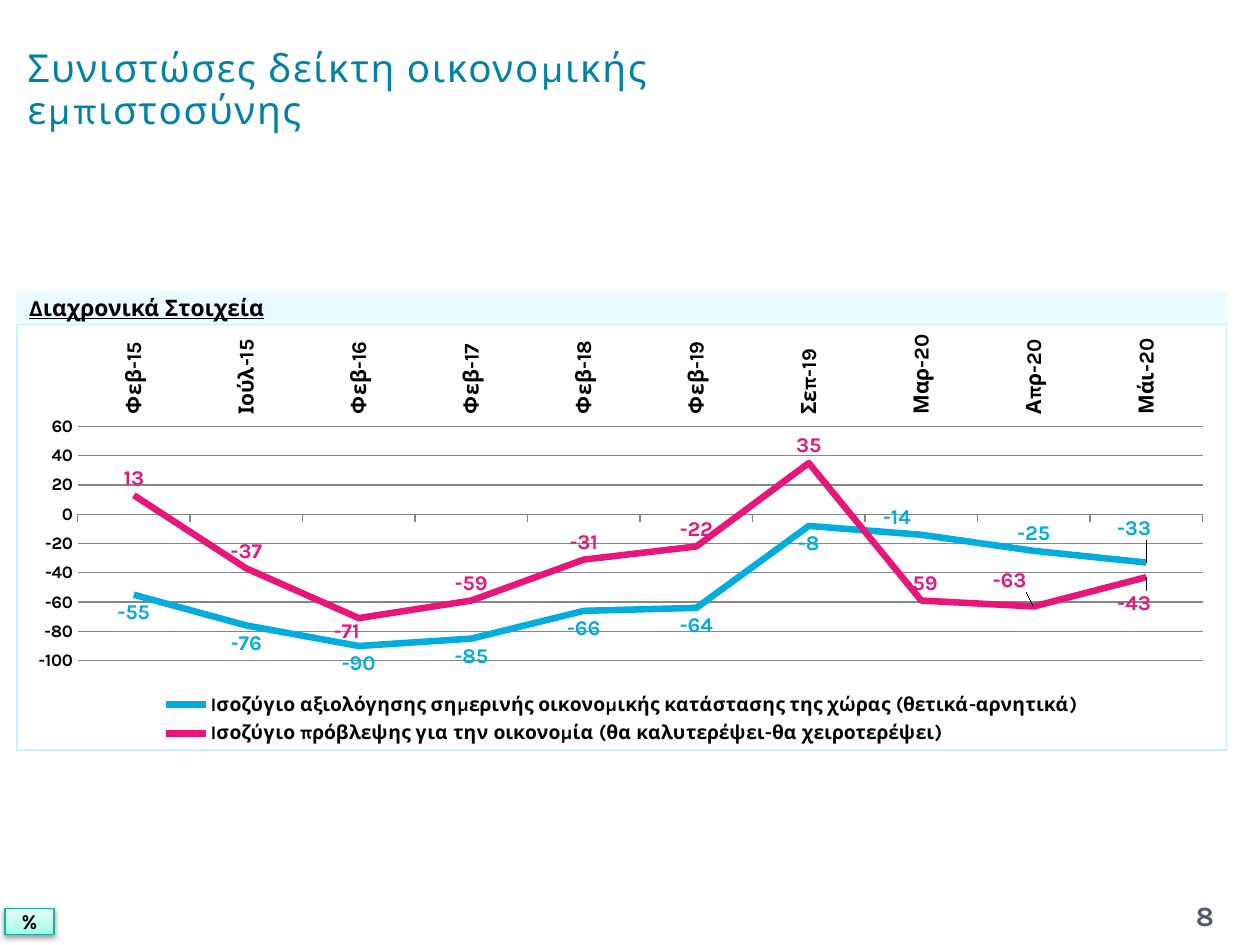
from pptx import Presentation
from pptx.chart.data import CategoryChartData
from pptx.dml.color import RGBColor
from pptx.enum.chart import (XL_CHART_TYPE, XL_LABEL_POSITION,
                             XL_LEGEND_POSITION, XL_TICK_LABEL_POSITION,
                             XL_TICK_MARK)
from pptx.enum.shapes import MSO_SHAPE
from pptx.enum.text import MSO_ANCHOR, PP_ALIGN
from pptx.oxml import parse_xml
from pptx.oxml.ns import nsdecls
from pptx.util import Pt

LINE = XL_CHART_TYPE.LINE
ABOVE, BELOW = XL_LABEL_POSITION.ABOVE, XL_LABEL_POSITION.BELOW
BOTTOM = XL_LEGEND_POSITION.BOTTOM
HIGH = XL_TICK_LABEL_POSITION.HIGH
OUT, NONE = XL_TICK_MARK.OUTSIDE, XL_TICK_MARK.NONE
RECT = MSO_SHAPE.RECTANGLE
MIDDLE = MSO_ANCHOR.MIDDLE
LEFT, CENTER = PP_ALIGN.LEFT, PP_ALIGN.CENTER

COLORS = {
    "title": "0082A5", "number": "4E5B6F", "text": "000000",
    "band": "C5F3FF", "grid": "868686", "badge": "16B39E",
    "now": "00ADDC", "next": "EA157A",
}
BADGE_STOPS = [(0, "9DFDE8"), (35, "BBFCED"), (100, "E4FFF9")]

DATES = ["Φεβ-15", "Ιούλ-15", "Φεβ-16", "Φεβ-17", "Φεβ-18",
         "Φεβ-19", "Σεπ-19", "Μαρ-20", "Απρ-20", "Μάι-20"]
# name, values, colour, label side, {point: (side, x shift, y shift)}
SERIES = [
    ("Iσοζύγιο αξιολόγησης σημερινής οικονομικής κατάστασης της χώρας "
     "(θετικά-αρνητικά)",
     [-55, -76, -90, -85, -66, -64, -8, -14, -25, -33], "now", BELOW,
     {7: (ABOVE, -0.02, 0), 8: (ABOVE, 0, 0), 9: (ABOVE, -0.01, -0.04)}),
    ("Iσοζύγιο πρόβλεψης για την οικονομία "
     "(θα καλυτερέψει-θα χειροτερέψει)",
     [13, -37, -71, -59, -31, -22, 35, -59, -63, -43], "next", ABOVE,
     {2: (BELOW, -0.01, -0.01), 8: (ABOVE, -0.02, -0.02),
      9: (BELOW, -0.01, 0.02)}),
]


def rgb(key):
    return RGBColor.from_string(COLORS[key])


def layout(x, y, w=None, h=None, inner=False):
    """Manual chart layout; without a size, x and y are shifts."""
    parts = '<c:layoutTarget val="inner"/>' if inner else ""
    if w:
        parts += '<c:xMode val="edge"/><c:yMode val="edge"/>'
    parts += f'<c:x val="{x}"/><c:y val="{y}"/>'
    if w:
        parts += f'<c:w val="{w}"/><c:h val="{h}"/>'
    return parse_xml(f'<c:layout {nsdecls("c")}><c:manualLayout>{parts}'
                     '</c:manualLayout></c:layout>')


class Deck:
    face = "Karla"

    def __init__(self, slide):
        self.slide = slide

    def style(self, font, size, color="text", bold=True):
        font.name, font.size, font.bold = self.face, Pt(size), bold
        font.color.rgb = rgb(color)

    def add_run(self, frame, text, size, color="text", bold=True,
                align=CENTER):
        frame.word_wrap = True
        frame.vertical_anchor = MIDDLE
        para = frame.paragraphs[0]
        para.alignment = align
        run = para.add_run()
        run.text = text
        self.style(run.font, size, color, bold)
        return run

    def title(self, text, x, y, w, h):
        shape = self.slide.shapes.title
        shape.left, shape.top, shape.width, shape.height = map(
            Pt, (x, y, w, h))
        run = self.add_run(shape.text_frame, text, 22, "title", False, LEFT)
        run.font._element.set("spc", "100")
        shape.text_frame.paragraphs[0].line_spacing = 0.9

    def label(self, text, x, y, w, h):
        box = self.slide.shapes.add_textbox(*map(Pt, (x, y, w, h)))
        self.add_run(box.text_frame, text, 16, "number")

    def rect(self, x, y, w, h):
        shape = self.slide.shapes.add_shape(RECT, *map(Pt, (x, y, w, h)))
        shape.shadow.inherit = False
        return shape

    def band(self, text, x, y, w, h):
        shape = self.rect(x, y, w, h)
        shape.line.fill.background()
        shape.fill.solid()
        shape.fill.fore_color.rgb = rgb("band")
        tint = shape._element.spPr.xpath("./a:solidFill/a:srgbClr")[0]
        tint.append(parse_xml(f'<a:alpha {nsdecls("a")} val="35000"/>'))
        # The underline runs on to a tab stop
        para = shape.text_frame.paragraphs[0]
        para._p.get_or_add_pPr().append(parse_xml(
            f'<a:tabLst {nsdecls("a")}><a:tab pos="{Pt(167)}" algn="l"/>'
            '</a:tabLst>'))
        for part in (text, "\t"):
            run = self.add_run(shape.text_frame, part, 13, align=LEFT)
            run.font.underline = True

    def badge(self, text, x, y, w, h):
        shape = self.rect(x, y, w, h)
        shape.line.color.rgb = rgb("badge")
        shape.line.width = Pt(0.75)
        stops = "".join(f'<a:gs pos="{pos * 1000}"><a:srgbClr val="{tone}"/>'
                        '</a:gs>' for pos, tone in BADGE_STOPS)
        props = shape._element.spPr
        props.xpath("./a:prstGeom")[0].addnext(parse_xml(
            f'<a:gradFill {nsdecls("a")}><a:gsLst>{stops}</a:gsLst>'
            '<a:lin ang="16200000" scaled="1"/></a:gradFill>'))
        props.xpath("./a:effectLst")[0].append(parse_xml(
            f'<a:outerShdw {nsdecls("a")} blurRad="{Pt(3.1)}" '
            f'dist="{Pt(1.6)}" dir="5400000" rotWithShape="0">'
            f'<a:srgbClr val="{COLORS["text"]}"><a:alpha val="38000"/>'
            '</a:srgbClr></a:outerShdw>'))
        self.add_run(shape.text_frame, text, 12)

    def chart(self, x, y, w, h):
        data = CategoryChartData()
        data.categories = DATES
        for name, vals, *_ in SERIES:
            data.add_series(name, vals)
        chart = self.slide.shapes.add_chart(
            LINE, *map(Pt, (x, y, w, h)), data).chart
        self.style(chart.font, 18, bold=False)
        chart.has_title = False
        self.axes(chart)

        # Legend, plot area and frame
        chart.has_legend = True
        legend = chart.legend
        legend.position, legend.include_in_layout = BOTTOM, False
        self.style(legend.font, 11)
        space = chart._chartSpace
        area = space.xpath("./c:chart/c:plotArea")[0]
        for old in area.xpath("./c:layout"):
            area.remove(old)
        area.insert(0, layout(0.05, 0.24, 0.93, 0.55, inner=True))
        space.xpath("./c:txPr")[0].addprevious(parse_xml(
            f'<c:spPr {nsdecls("c", "a")}><a:noFill/><a:ln w="{Pt(0.75)}">'
            f'<a:solidFill><a:srgbClr val="{COLORS["band"]}"/></a:solidFill>'
            '</a:ln></c:spPr>'))

        for line, row in zip(chart.plots[0].series, SERIES):
            self.line(line, *row[2:])

    def axes(self, chart):
        dates, scale = chart.category_axis, chart.value_axis
        dates.major_tick_mark, dates.tick_label_position = OUT, HIGH
        dates.format.line.color.rgb = rgb("grid")
        self.style(dates.tick_labels.font, 12)
        dates._element.txPr.bodyPr.set("rot", "-5400000")
        scale.minimum_scale, scale.maximum_scale = -100, 60
        scale.major_unit, scale.major_tick_mark = 20, NONE
        scale.format.line.fill.background()
        scale.major_gridlines.format.line.color.rgb = rgb("grid")
        self.style(scale.tick_labels.font, 10)

    def line(self, line, color, side, moved):
        line.smooth = False
        line.format.line.color.rgb = rgb(color)
        line.format.line.width = Pt(3.75)
        tags = line.data_labels
        tags.show_value, tags.position = True, side
        self.style(tags.font, 12, color)
        for point, (place, dx, dy) in moved.items():
            tag = line.points[point].data_label
            self.style(tag.font, 12, color)
            tag.position = place
            node = tags._element.xpath(f'./c:dLbl[c:idx/@val="{point}"]')[0]
            node.insert(1, layout(dx, dy))


def main():
    prs = Presentation()
    prs.slide_width, prs.slide_height = Pt(720), Pt(540)
    deck = Deck(prs.slides.add_slide(prs.slide_layouts[5]))
    deck.title("Συνιστώσες δείκτη οικονομικής εμπιστοσύνης", 8.6, 9.4, 493, 85)
    deck.label("8", 660, 508.3, 57, 29)
    deck.badge("%", 2.9, 519, 28, 15)
    deck.chart(9.4, 185, 692, 244)
    deck.band("Διαχρονικά Στοιχεία", 9.4, 166.3, 692, 18.7)
    prs.save("out.pptx")


if __name__ == "__main__":
    main()
